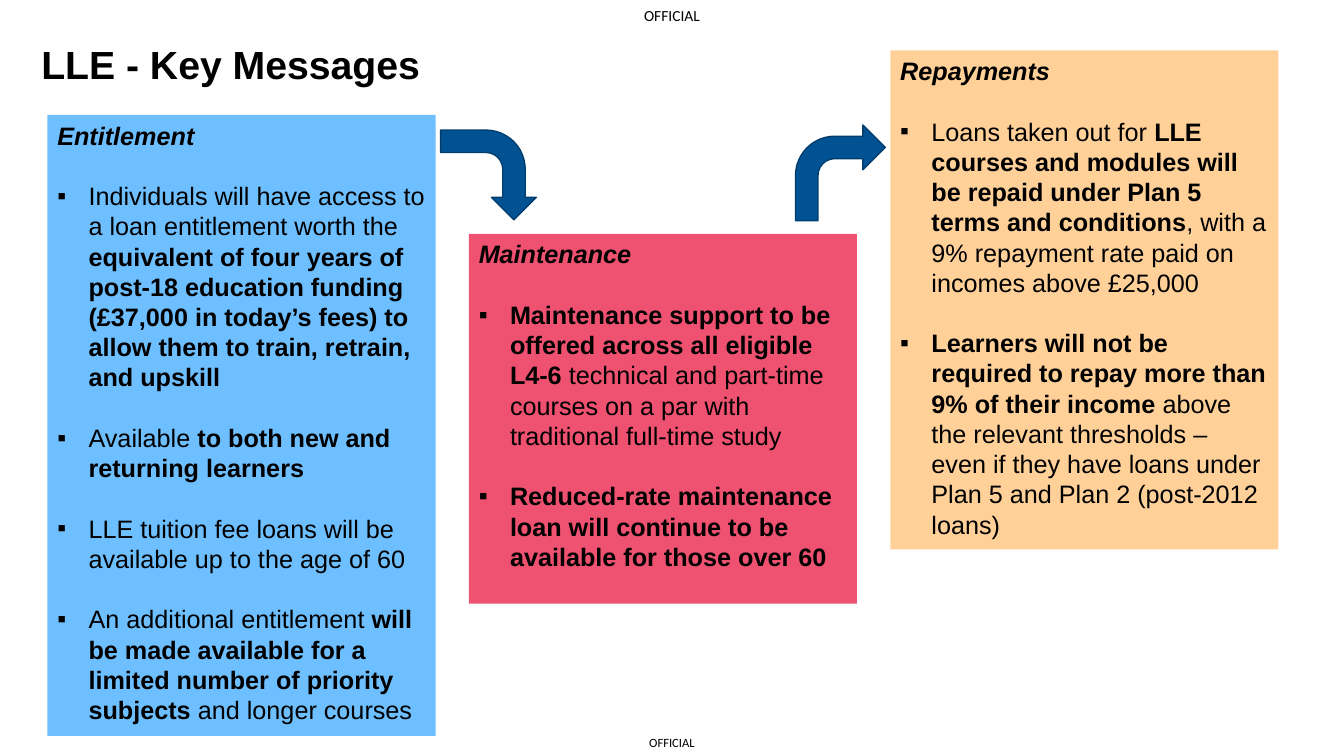
import pptx
import pptx.util
import pptx.dml.color
import pptx.enum.shapes
import pptx.enum.text
import pptx.oxml
import pptx.oxml.ns
from dataclasses import dataclass

Inches = pptx.util.Inches
Pt = pptx.util.Pt
Align = pptx.enum.text.PP_ALIGN
Anchor = pptx.enum.text.MSO_ANCHOR
Shape = pptx.enum.shapes.MSO_SHAPE


@dataclass
class Theme:
    font: str = "Arial"
    mark_font: str = "Calibri"
    ink: str = "000000"
    blue: str = "6EBFFF"
    pink: str = "EF5170"
    peach: str = "FFD199"
    arrow: str = "005293"
    edge: str = "003D6D"
    title: float = 28
    body: float = 18
    pitch: float = 21.6
    top_mark: float = 11
    low_mark: float = 9


def color(code):
    return pptx.dml.color.RGBColor.from_string(code)


class Deck:
    def __init__(self, theme):
        self.theme = theme
        self.file = pptx.Presentation()
        self.file.slide_width = Inches(13.33)
        self.file.slide_height = Inches(7.5)
        self.slide = self.file.slides.add_slide(self.file.slide_layouts[5])

    def style(self, font, size, bold=False, italic=False, name=None):
        font.name = name or self.theme.font
        font.size = Pt(size)
        font.bold = bold
        font.italic = italic
        font.color.rgb = color(self.theme.ink)

    def title(self, text, *box):
        holder = self.slide.shapes.title
        holder.left, holder.top, holder.width, holder.height = map(Inches, box)
        frame = holder.text_frame
        frame.text = text
        frame.auto_size = pptx.enum.text.MSO_AUTO_SIZE.NONE
        frame.vertical_anchor = Anchor.MIDDLE
        para = frame.paragraphs[0]
        para.alignment = Align.LEFT
        para.line_spacing = 0.9
        self.style(para.runs[0].font, self.theme.title, bold=True)

    def mark(self, text, size, *box):
        frame = self.slide.shapes.add_textbox(*map(Inches, box)).text_frame
        frame.word_wrap = True
        frame.margin_left = frame.margin_right = 0
        frame.margin_top = frame.margin_bottom = 0
        frame.vertical_anchor = Anchor.MIDDLE
        frame.text = text
        para = frame.paragraphs[0]
        para.alignment = Align.CENTER
        self.style(para.runs[0].font, size, name=self.theme.mark_font)

    def shape(self, kind, fill, *box):
        item = self.slide.shapes.add_shape(kind, *map(Inches, box))
        item.shadow.inherit = False
        item.fill.solid()
        item.fill.fore_color.rgb = color(fill)
        return item

    def arrow(self, turn, *box):
        item = self.shape(Shape.BENT_ARROW, self.theme.arrow, *box)
        item.line.color.rgb = color(self.theme.edge)
        item.line.width = Pt(1)
        item.rotation = turn

    def bullet(self, para):
        props = para._p.get_or_add_pPr()
        props.set("marL", str(Inches(0.31)))
        props.set("indent", str(-Inches(0.31)))
        space = pptx.oxml.ns.nsdecls("a")
        for part in ('buFont {} typeface="Arial"', 'buChar {} char="▪"'):
            props.append(pptx.oxml.parse_xml(f"<a:{part.format(space)}/>"))

    def card(self, head, points, fill, *box):
        item = self.shape(Shape.RECTANGLE, fill, *box)
        item.line.fill.background()
        frame = item.text_frame
        frame.word_wrap = True
        frame.vertical_anchor = Anchor.TOP
        frame.text = head
        para = frame.paragraphs[0]
        para.alignment = Align.JUSTIFY
        para.line_spacing = Pt(self.theme.pitch)
        self.style(para.runs[0].font, self.theme.body, bold=True, italic=True)
        for point in points:
            para = frame.add_paragraph()
            self.bullet(para)
            para.alignment = Align.LEFT
            para.line_spacing = para.space_before = Pt(self.theme.pitch)
            for text, bold in point:
                run = para.add_run()
                run.text = text
                self.style(run.font, self.theme.body, bold)


def main():
    theme = Theme()
    deck = Deck(theme)
    deck.mark("OFFICIAL", theme.top_mark, 6.23, 0, 0.87, 0.31)
    deck.mark("OFFICIAL", theme.low_mark, 6.3, 7.23, 0.73, 0.27)
    deck.title("LLE - Key Messages", 0.31, 0.03, 11.97, 1.26)

    cards = [
        ("Entitlement", theme.blue, 1.14, 6.16, [
            [("Individuals will have access to a loan entitlement worth the ", False),
             ("equivalent of four years of post-18 education funding (£37,000 in "
              "today’s fees) to allow them to train, retrain, and upskill", True)],
            [("Available ", False), ("to both new and returning learners", True)],
            [("LLE tuition fee loans will be available up to the age of 60", False)],
            [("An additional entitlement ", False),
             ("will be made available for a limited number of priority subjects ", True),
             ("and longer courses", False)],
        ]),
        ("Maintenance", theme.pink, 2.32, 3.67, [
            [("Maintenance support to be offered across all eligible L4-6 ", True),
             ("technical and part-time courses on a par with traditional "
              "full-time study", False)],
            [("Reduced-rate maintenance loan will continue to be available for "
              "those over 60", True)],
        ]),
        ("Repayments", theme.peach, 0.5, 4.95, [
            [("Loans taken out for ", False),
             ("LLE courses and modules will be repaid under Plan 5 terms and "
              "conditions", True),
             (", with a 9% repayment rate paid on incomes above £25,000", False)],
            [("Learners will not be required to repay more than 9% of their income", True),
             (" above the relevant thresholds – even if they have loans under "
              "Plan 5 and Plan 2 (post-2012 loans)", False)],
        ]),
    ]
    for i, (head, fill, top, height, points) in enumerate(cards):
        deck.card(head, points, fill, 0.47 + 4.18 * i, top, 3.85, height)

    deck.arrow(0, 7.89, 1.24, 0.89, 0.95)
    deck.arrow(90, 4.4, 1.26, 0.89, 0.95)
    deck.file.save("out.pptx")


if __name__ == "__main__":
    main()
